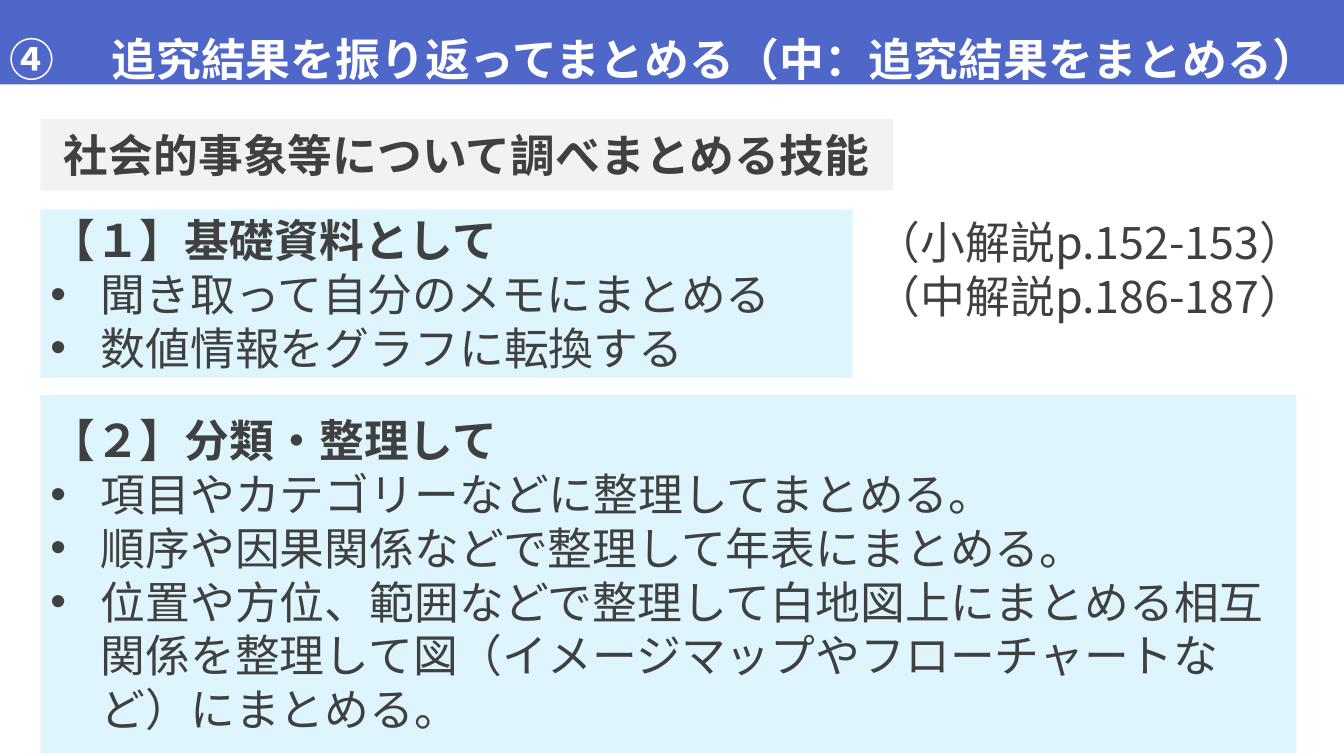
"""Build a slide on summarising research results in social studies."""
from lxml.etree import SubElement
from pptx import Presentation
from pptx.dml.color import RGBColor
from pptx.enum.shapes import MSO_SHAPE as Shape
from pptx.enum.text import MSO_ANCHOR as Anchor, PP_ALIGN as Align
from pptx.oxml.ns import qn
from pptx.util import Cm, Pt

BLUE = RGBColor(0x4E, 0x67, 0xC8)
PALE_BLUE = RGBColor(0xDF, 0xF5, 0xFD)
PALE_GRAY = RGBColor(0xF2, 0xF2, 0xF2)
DARK_GRAY = RGBColor(0x40, 0x40, 0x40)
WHITE = RGBColor(0xFF, 0xFF, 0xFF)
WIDTH, HEIGHT, MARGIN = 33.87, 19.05, 1.02


class SlideBuilder:
    font_name = "Noto Sans CJK JP"
    font_size = Pt(32)

    def __init__(self, slide):
        self.slide = slide

    def panel(self, left, top, width, height, fill, anchor=Anchor.MIDDLE):
        shape = self.slide.shapes.add_shape(
            Shape.RECTANGLE, Cm(left), Cm(top), Cm(width), Cm(height))
        shape.shadow.inherit = False
        shape.fill.solid()
        shape.fill.fore_color.rgb = fill
        shape.line.fill.background()
        shape.text_frame.vertical_anchor = anchor
        return shape.text_frame

    def text_box(self, left, top, width, height):
        shape = self.slide.shapes.add_textbox(
            Cm(left), Cm(top), Cm(width), Cm(height))
        shape.text_frame.word_wrap = True
        return shape.text_frame

    def paragraph(self, frame, text, color=DARK_GRAY, bold=False, align=Align.LEFT):
        paragraph = frame.paragraphs[0]
        if paragraph.runs:
            paragraph = frame.add_paragraph()
        paragraph.alignment = align
        run = paragraph.add_run()
        run.text = text
        font = run.font
        font.name, font.size, font.bold = self.font_name, self.font_size, bold
        font.color.rgb = color
        east_asian = SubElement(font._element, qn("a:ea"))
        east_asian.set("typeface", self.font_name)
        return paragraph

    def marker(self, paragraph, indent, typeface, tag, **attributes):
        properties = paragraph._p.get_or_add_pPr()
        properties.set("marL", str(Cm(indent)))
        properties.set("indent", str(-Cm(indent)))
        SubElement(properties, qn("a:buFont")).set("typeface", typeface)
        SubElement(properties, qn(tag), attributes)

    def section(self, frame, heading, items):
        self.paragraph(frame, heading, bold=True)
        for item in items:
            paragraph = self.paragraph(frame, item)
            self.marker(paragraph, 1.27, "Arial", "a:buChar", char="•")


def main():
    presentation = Presentation()
    presentation.slide_width, presentation.slide_height = Cm(WIDTH), Cm(HEIGHT)
    slide = presentation.slides.add_slide(presentation.slide_layouts[6])
    builder = SlideBuilder(slide)

    banner = builder.panel(0, 0, WIDTH, 2.13, BLUE, Anchor.TOP)
    title = builder.paragraph(
        banner, "　追究結果を振り返ってまとめる（中：追究結果をまとめる）", WHITE, bold=True)
    title.line_spacing = 1.5
    builder.marker(title, 1.43, "+mj-ea", "a:buAutoNum",
                   type="circleNumDbPlain", startAt="4")

    basics = builder.panel(MARGIN, 5.28, 20.47, 4.24, PALE_BLUE)
    builder.section(basics, "【１】基礎資料として", [
        "聞き取って自分のメモにまとめる",
        "数値情報をグラフに転換する",
    ])

    skill = builder.panel(MARGIN, 3, 21.49, 1.8, PALE_GRAY)
    builder.paragraph(skill, "社会的事象等について調べまとめる技能",
                      bold=True, align=Align.CENTER)

    references = builder.text_box(21.82, 5.28, 12.04, 3)
    for reference in ("（小解説p.152-153）", "（中解説p.186-187）"):
        builder.paragraph(references, reference)

    sorting = builder.panel(MARGIN, 9.96, 31.65, 9.02, PALE_BLUE)
    builder.section(sorting, "【２】分類・整理して", [
        "項目やカテゴリーなどに整理してまとめる。",
        "順序や因果関係などで整理して年表にまとめる。",
        "位置や方位、範囲などで整理して白地図上にまとめる相互関係を整理して図"
        "（イメージマップやフローチャートなど）にまとめる。",
    ])
    presentation.save("out.pptx")


if __name__ == "__main__":
    main()
